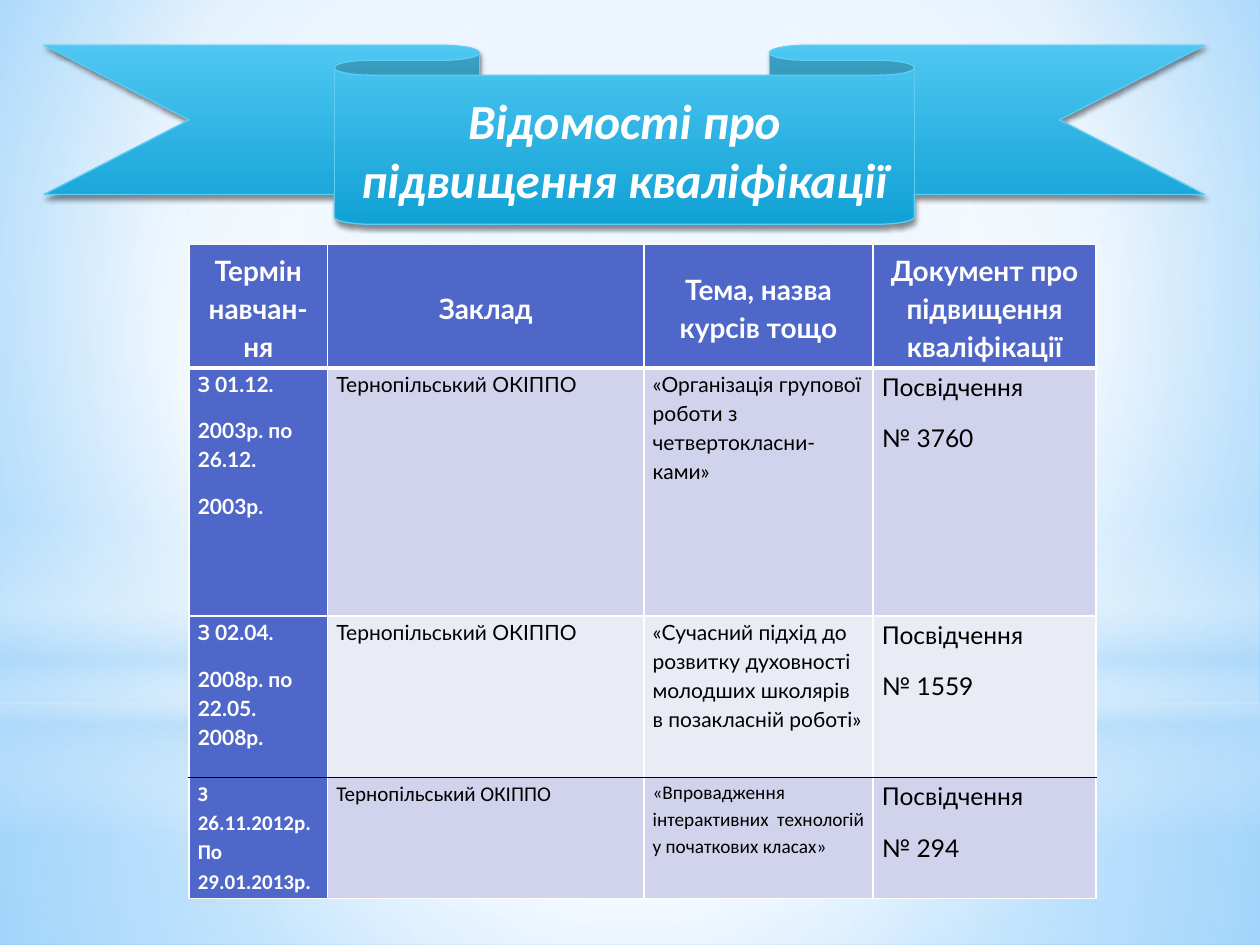
from lxml.etree import SubElement
from pptx import Presentation
from pptx.dml.color import RGBColor
from pptx.enum.shapes import MSO_SHAPE as Shape
from pptx.enum.text import MSO_ANCHOR as Anchor, PP_ALIGN as Align
from pptx.oxml.ns import qn
from pptx.util import Inches, Pt

WHITE = RGBColor(0xFF, 0xFE, 0xFF)
PURE_WHITE = RGBColor(0xFF, 0xFF, 0xFF)
BLACK = RGBColor(0, 0, 0)
INDIGO = RGBColor(0x4E, 0x67, 0xC8)
BANDS = RGBColor(0xD0, 0xD3, 0xEB), RGBColor(0xE9, 0xEB, 0xF5)
SKY, PALE_SKY = RGBColor(0x9E, 0xD5, 0xFF), RGBColor(0xB4, 0xDC, 0xFA)
DEEP_SKY = RGBColor(0x5B, 0xB9, 0xFF)
CYAN, DARK_CYAN = RGBColor(0x4E, 0xC7, 0xF2), RGBColor(0x11, 0xA1, 0xD4)
CYAN_LINE = RGBColor(0x5E, 0xCC, 0xF3)
CENTER = (50, 50, 50, 50)

HEADERS = ["Термін навчан-ня", "Заклад", "Тема, назва курсів тощо",
           "Документ про підвищення кваліфікації"]
PLACE = "Тернопільський ОКІППО"
COURSES = [
    [["З 01.12.", "2003р. по 26.12.", "2003р."], [PLACE],
     ["«Організація групової роботи з четвертокласни-ками»"],
     ["Посвідчення", "№ 3760"]],
    [["З 02.04.", "2008р. по 22.05. 2008р."], [PLACE],
     ["«Сучасний підхід до розвитку духовності молодших школярів "
      "в позакласній роботі»"],
     ["Посвідчення", "№ 1559"]],
    [["З 26.11.2012р. По 29.01.2013р."], [PLACE],
     ["«Впровадження інтерактивних технологій у початкових класах»"],
     ["Посвідчення", "№ 294"]],
]
COL_WIDTHS = [1.1, 2.51, 1.82, 1.77]
ROW_HEIGHTS = [0.98, 1.97, 1.28, 0.96]
# Horizontal rules from the top edge of the table to its bottom edge
RULES = [(WHITE, 1), (WHITE, 3), (WHITE, 1), (BLACK, 1), (WHITE, 1)]


def add(parent, tag, **attrs):
    return SubElement(parent, qn(tag), {k: str(v) for k, v in attrs.items()})


def add_color(parent, color, opacity=100):
    clr = add(parent, "a:srgbClr", val=color)
    if opacity < 100:
        add(clr, "a:alpha", val=opacity * 1000)


def set_gradient(fill, holder, stops, focus=None):
    """Fill with (position, colour, opacity) stops, round a focus or downwards."""
    fill.solid()
    solid = holder.find(qn("a:solidFill"))
    grad = add(holder, "a:gradFill", rotWithShape=1)
    holder.replace(solid, grad)
    stop_list = add(grad, "a:gsLst")
    for position, color, opacity in stops:
        add_color(add(stop_list, "a:gs", pos=position * 1000), color, opacity)
    if focus:
        circle = add(grad, "a:path", path="circle")
        add(circle, "a:fillToRect", **{k: v * 1000 for k, v in zip("ltrb", focus)})
    else:
        add(grad, "a:lin", ang=90 * 60000, scaled=0)


def add_gradient_shape(s, kind, box, stops, focus=None):
    sp = s.shapes.add_shape(kind, *map(Inches, box))
    sp.shadow.inherit = False
    sp.line.fill.background()
    set_gradient(sp.fill, sp.element.spPr, stops, focus)
    return sp


def add_backdrop(s, width, height):
    fill = s.background.fill
    fill.solid()
    set_gradient(fill, s.element.find(".//" + qn("p:bgPr")),
                 [(0, SKY, 100), (60, PURE_WHITE, 100), (100, DEEP_SKY, 100)],
                 (20, 10, 20, 60))
    horizon = 5.58
    add_gradient_shape(s, Shape.RECTANGLE, (0, horizon, width, height - horizon),
                       [(0, WHITE, 91), (37, WHITE, 76), (100, PALE_SKY, 79)], CENTER)
    add_gradient_shape(s, Shape.RECTANGLE, (0, 0, width, horizon),
                       [(0, WHITE, 89), (48, WHITE, 62), (100, PALE_SKY, 79)], CENTER)
    add_gradient_shape(s, Shape.RECTANGLE, (0, 4.12, width, 2.5),
                       [(0, WHITE, 0), (29, WHITE, 30), (45, PALE_SKY, 40),
                        (55, WHITE, 26), (65, PALE_SKY, 60), (100, WHITE, 0)])
    add_gradient_shape(s, Shape.OVAL, (0, 1.75, width, horizon),
                       [(0, WHITE, 100), (56, WHITE, 0)], CENTER)


def set_font(p, name, size, color, bold, italic=False):
    f = p.font
    f.name, f.size, f.bold, f.italic = name, Pt(size), bold, italic
    f.color.rgb = color


def add_banner(s, box, text):
    sp = add_gradient_shape(s, Shape.DOWN_RIBBON, box,
                            [(0, CYAN, 100), (100, DARK_CYAN, 100)])
    sp.line.color.rgb = CYAN_LINE
    sp.line.width = Pt(0.75)
    shadow = add(sp.element.spPr.find(qn("a:effectLst")), "a:outerShdw",
                 blurRad=Pt(3.1), dist=Pt(1.8), dir=90 * 60000, rotWithShape=0)
    add_color(shadow, BLACK, 45)
    tf = sp.text_frame
    tf.word_wrap = True
    tf.vertical_anchor = Anchor.MIDDLE
    p = tf.paragraphs[0]
    p.text = text
    p.alignment = Align.CENTER
    set_font(p, "Calibri", 28, WHITE, True, True)


def set_borders(cell, top, bottom):
    side = (WHITE, 1)
    tcPr = cell._tc.get_or_add_tcPr()
    edges = zip(("a:lnL", "a:lnR", "a:lnT", "a:lnB"), (side, side, top, bottom))
    for tag, (color, width) in edges:
        add_color(add(add(tcPr, tag, w=Pt(width)), "a:solidFill"), color)


def fill_cell(cell, lines, fill, rules):
    set_borders(cell, *rules)
    cell.fill.solid()
    cell.fill.fore_color.rgb = fill
    cell.margin_left = cell.margin_right = Inches(0.07)
    cell.margin_top = cell.margin_bottom = 0
    tf = cell.text_frame
    tf.text = "\n".join(lines)
    for p in tf.paragraphs:
        p.line_spacing = 1.15
    return tf.paragraphs


def add_course_table(s, box):
    table = s.shapes.add_table(len(ROW_HEIGHTS), len(COL_WIDTHS),
                               *map(Inches, box)).table
    table.first_row = table.horz_banding = False
    for col, width in zip(table.columns, COL_WIDTHS):
        col.width = Inches(width)
    for row, height in zip(table.rows, ROW_HEIGHTS):
        row.height = Inches(height)

    for c, text in enumerate(HEADERS):
        cell = table.cell(0, c)
        cell.vertical_anchor = Anchor.MIDDLE
        for p in fill_cell(cell, [text], INDIGO, RULES[:2]):
            p.alignment = Align.CENTER
            set_font(p, "Lato", 16, WHITE, True)

    for r, course in enumerate(COURSES, 1):
        last = r == len(COURSES)
        sizes = [12, 12, 11 if last else 12, 14]
        for c, lines in enumerate(course):
            is_term = c == 0
            fill = INDIGO if is_term else BANDS[(r - 1) % 2]
            font = "Calibri" if last and c < 3 else "Lato"
            for p in fill_cell(table.cell(r, c), lines, fill, RULES[r:r + 2]):
                p.space_after = Pt(10)
                if last and c == 2:
                    p.alignment = Align.JUSTIFY
                set_font(p, font, sizes[c], WHITE if is_term else BLACK, is_term)


def main():
    prs = Presentation()
    prs.slide_width, prs.slide_height = Inches(10), Inches(7.5)
    s = prs.slides.add_slide(prs.slide_layouts[6])
    add_backdrop(s, 10, 7.5)
    add_banner(s, (0.35, 0.36, 9.21, 1.42), "Відомості про підвищення кваліфікації")
    add_course_table(s, (1.5, 1.94, sum(COL_WIDTHS), sum(ROW_HEIGHTS)))
    prs.save("out.pptx")


if __name__ == "__main__":
    main()
